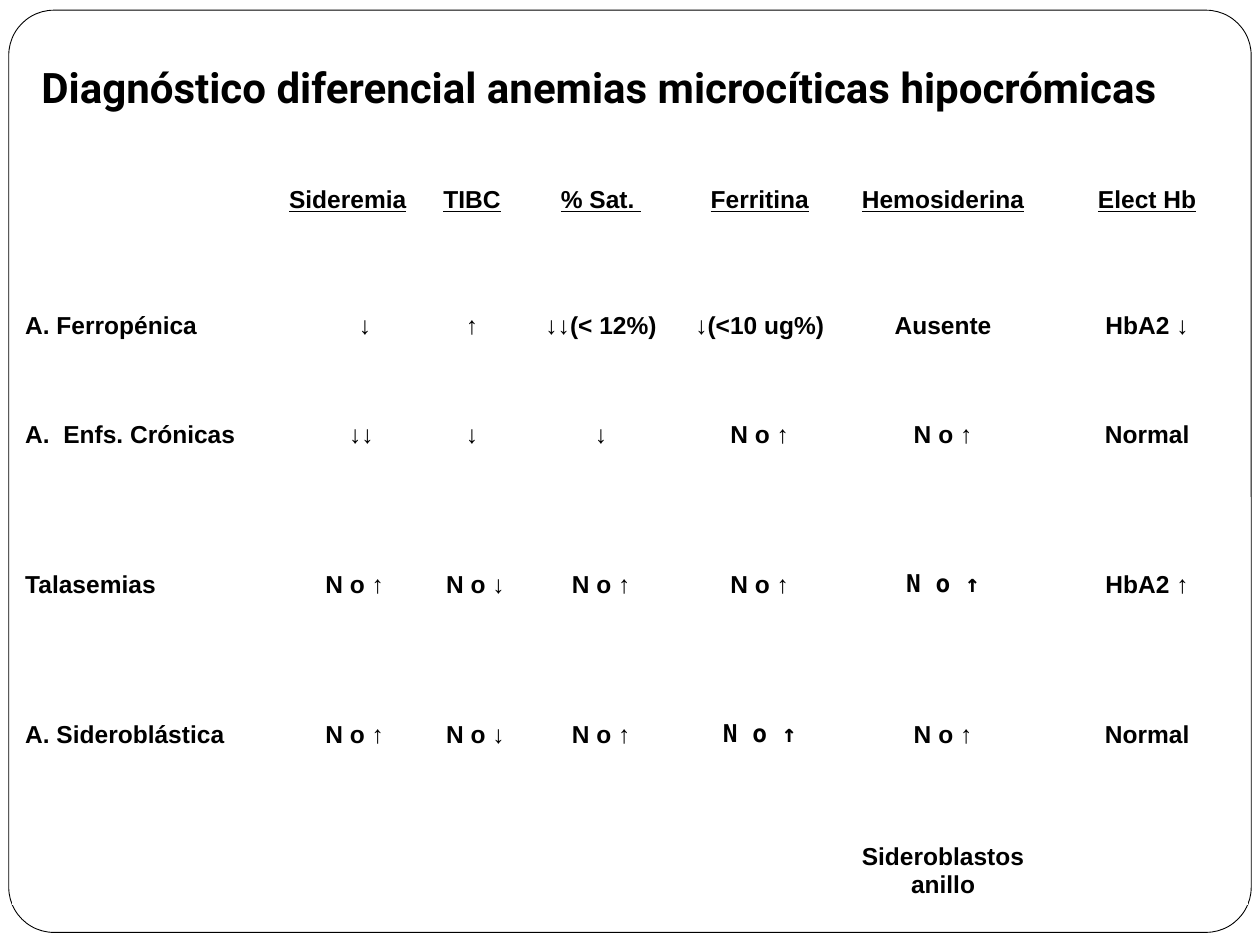
from dataclasses import dataclass

from pptx import Presentation
from pptx import util as u
from pptx.dml import color
from pptx.enum import shapes, text


@dataclass(frozen=True)
class Theme:
    ink: color.RGBColor = color.RGBColor(0, 0, 0)
    paper: color.RGBColor = color.RGBColor(255, 255, 255)
    title_font: str = "Roboto"
    body_font: str = "Arial"
    mono_font: str = "DejaVu Sans Mono"
    title_size: float = 24
    body_size: float = 14


class SlideBuilder:
    def __init__(self, slide, theme):
        self.slide = slide
        self.theme = theme

    def add_text(self, paragraph, wording, **formats):
        run = paragraph.add_run()
        run.text = wording
        values = {"name": self.theme.body_font, "size": u.Pt(self.theme.body_size),
                  "bold": True, **formats}
        for attribute, value in values.items():
            setattr(run.font, attribute, value)
        run.font.color.rgb = self.theme.ink

    def frame(self, left, top, width, height, radius):
        shape = self.slide.shapes.add_shape(
            shapes.MSO_SHAPE.ROUNDED_RECTANGLE,
            u.Pt(left), u.Pt(top), u.Pt(width), u.Pt(height))
        shape.adjustments[0] = radius / min(width, height)
        shape.shadow.inherit = False
        shape.fill.solid()
        shape.fill.fore_color.rgb = self.theme.paper
        shape.line.color.rgb = self.theme.ink
        shape.line.width = u.Pt(0.5)

    def title(self, wording, left, top, width, height):
        box = self.slide.shapes.add_textbox(
            u.Pt(left), u.Pt(top), u.Pt(width), u.Pt(height))
        box.text_frame.word_wrap = True
        box.text_frame.auto_size = text.MSO_AUTO_SIZE.SHAPE_TO_FIT_TEXT
        self.add_text(box.text_frame.paragraphs[0], wording,
                      name=self.theme.title_font, size=u.Pt(self.theme.title_size))

    def table(self, left, top, widths, heights):
        table = self.slide.shapes.add_table(
            len(heights), len(widths), u.Pt(left), u.Pt(top),
            u.Pt(sum(widths)), u.Pt(sum(heights))).table
        table.first_row = table.horz_banding = False
        for column, width in zip(table.columns, widths):
            column.width = u.Pt(width)
        for row, height in zip(table.rows, heights):
            row.height = u.Pt(height)
        for cell in table.iter_cells():
            cell.fill.background()
            cell.vertical_anchor = text.MSO_ANCHOR.BOTTOM
        return table

    def cell(self, cell, wording, centered=True, shift=0, **formats):
        paragraph = cell.text_frame.paragraphs[0]
        paragraph.alignment = text.PP_ALIGN.CENTER if centered else text.PP_ALIGN.LEFT
        cell.margin_left = u.Pt(7.2 + shift)
        self.add_text(paragraph, wording, **formats)


HEADINGS = ["Sideremia", "TIBC", "% Sat. ", "Ferritina", "Hemosiderina", "Elect Hb"]
ANEMIAS = [
    ("A. Ferropénica", "↓", "↑", "↓↓(< 12%)", "↓(<10 ug%)", "Ausente", "HbA2 ↓"),
    ("A.  Enfs. Crónicas", "↓↓", "↓", "↓", "N o ↑", "N o ↑", "Normal"),
    ("Talasemias", "N o ↑", "N o ↓", "N o ↑", "N o ↑", "N o ↑", "HbA2 ↑"),
    ("A. Sideroblástica", "N o ↑", "N o ↓", "N o ↑", "N o ↑", "N o ↑", "Normal"),
]
COLUMN_WIDTHS = [131.8, 17.3, 85, 56.9, 90.7, 90.7, 118.8, 114.4]
ROW_HEIGHTS = [37.4, 72, 61.9, 85.7, 85.7, 85.7]
FIRST_VALUE = 2  # the row name spans the two columns before it
HEMOSIDERIN = FIRST_VALUE + HEADINGS.index("Hemosiderina")

# Extra left margin by (row, column)
SHIFTS = {(1, 2): 19.5, (2, 2): 15.6, (3, 2): 7.8, (4, 2): 7.8,
          (3, 3): 3.9, (4, 3): 3.9}


def main():
    presentation = Presentation()
    presentation.slide_width, presentation.slide_height = u.Pt(720), u.Pt(540)
    slide = presentation.slides.add_slide(presentation.slide_layouts[6])
    theme = Theme()
    builder = SlideBuilder(slide, theme)
    mono = {"name": theme.mono_font}
    formats = {(1, 2): {"bold": False}, (3, 6): mono, (4, 5): mono}

    # Frame around the slide
    builder.frame(5, 5.8, 710, 527, radius=25.8)

    # Table: headings, one row per anemia, closing remark
    table = builder.table(7.2, 88.6, COLUMN_WIDTHS, ROW_HEIGHTS)
    for row in range(len(ANEMIAS) + 1):
        table.cell(row, 0).merge(table.cell(row, 1))
    for column, heading in enumerate(HEADINGS, FIRST_VALUE):
        builder.cell(table.cell(0, column), heading, underline=True)
    for row, (anemia, *findings) in enumerate(ANEMIAS, 1):
        builder.cell(table.cell(row, 0), anemia, centered=False)
        for column, finding in enumerate(findings, FIRST_VALUE):
            place = row, column
            builder.cell(table.cell(row, column), finding,
                         shift=SHIFTS.get(place, 0), **formats.get(place, {}))
    builder.cell(table.cell(len(ANEMIAS) + 1, HEMOSIDERIN), "Sideroblastos anillo")

    # Title
    builder.title("Diagnóstico diferencial anemias microcíticas hipocrómicas",
                  16.6, 31.7, 702.7, 36)

    presentation.save("out.pptx")


if __name__ == "__main__":
    main()
